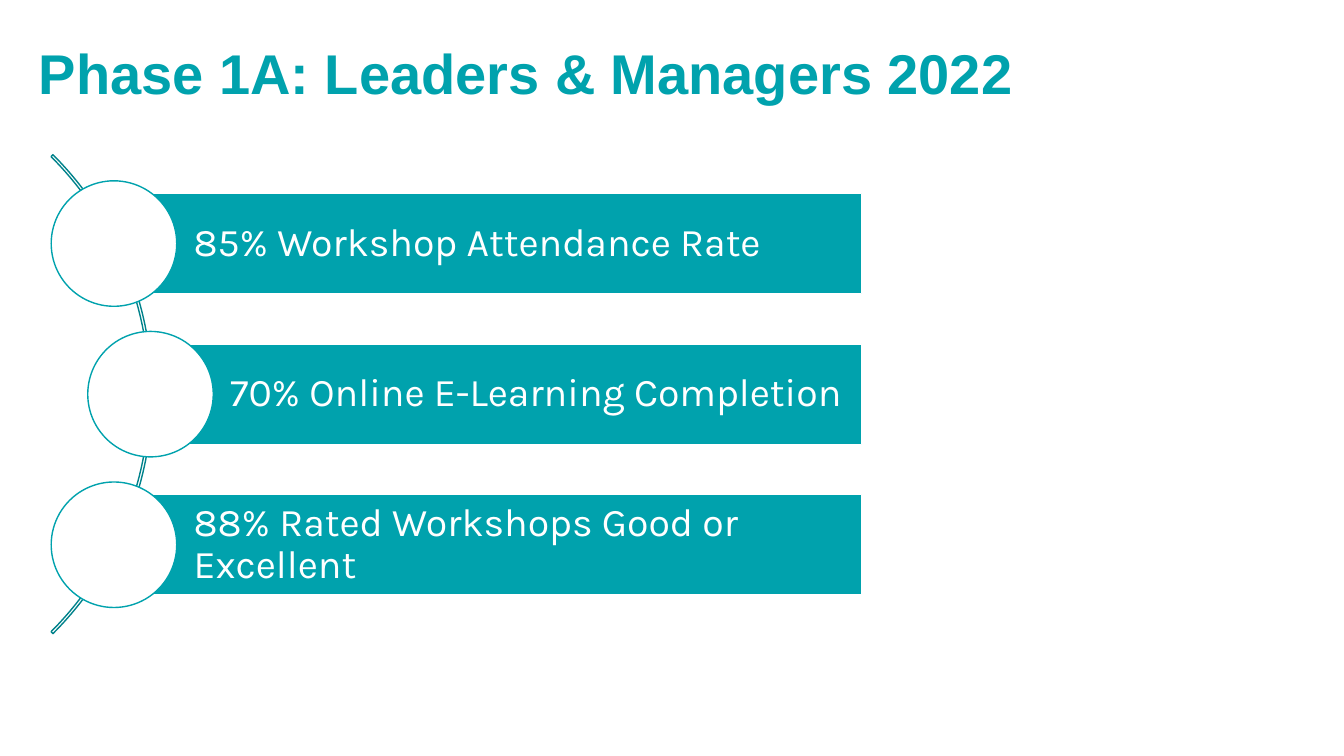
from pptx import Presentation
from pptx.dml.color import RGBColor
from pptx.enum.shapes import MSO_SHAPE
from pptx.enum.text import MSO_ANCHOR, PP_ALIGN
from pptx.util import Pt

ARC, BAR, DOT = MSO_SHAPE.BLOCK_ARC, MSO_SHAPE.RECTANGLE, MSO_SHAPE.OVAL
MIDDLE, LEFT = MSO_ANCHOR.MIDDLE, PP_ALIGN.LEFT
TEAL, DARK, WHITE = "00A2AD", "00828B", "FFFFFF"
RATES = [
    "85% Workshop Attendance Rate",
    "70% Online E-Learning Completion",
    "88% Rated Workshops Good or Excellent",
]


def color(code):
    return RGBColor.from_string(code)


def add_shape(slide, kind, box, fill, line):
    shape = slide.shapes.add_shape(kind, *map(Pt, box))
    shape.shadow.inherit = False
    if fill:
        shape.fill.solid()
        shape.fill.fore_color.rgb = color(fill)
    else:
        shape.fill.background()
    shape.line.color.rgb = color(line)
    shape.line.width = Pt(1)
    return shape


def set_text(shape, text, font, size, tint, bold=False):
    frame = shape.text_frame
    frame.word_wrap = True
    frame.vertical_anchor = MIDDLE
    frame.text = text
    para = frame.paragraphs[0]
    para.alignment = LEFT
    para.line_spacing = 0.9
    para.font.name = font
    para.font.size = Pt(size)
    para.font.bold = bold
    para.font.color.rgb = color(tint)


def add_title(slide, text, box):
    title = slide.shapes.title
    title.left, title.top, title.width, title.height = map(Pt, box)
    set_text(title, text, "Arial", 40, TEAL, True)


def add_rate(slide, text, box):
    """Draw a bar with a circle centred on its left edge."""
    left, top, width, height = box
    bar = add_shape(slide, BAR, box, TEAL, WHITE)
    set_text(bar, text, "Karla", 28, WHITE)
    frame = bar.text_frame
    frame.margin_left = Pt(56.9)
    frame.margin_right = frame.margin_top = frame.margin_bottom = Pt(5.6)
    size = 1.25 * height
    dot = (left - size / 2, top + (height - size) / 2, size, size)
    add_shape(slide, DOT, dot, WHITE, TEAL)


def add_list(slide, rates, box):
    """Draw bars along an arc that bulges right at mid-height."""
    left, top, width, height = box
    size = 483.8
    arc_box = (left - 456.5, top + (height - size) / 2, size, size)
    arc = add_shape(slide, ARC, arc_box, None, DARK)
    for i, value in enumerate((189, 27, 0.004)):
        arc.adjustments[i] = value
    tall = height / 4
    step = (height - tall) / (len(rates) - 1)
    for i, text in enumerate(rates):
        shift = 26.1 if i == len(rates) // 2 else 0
        add_rate(slide, text, (left + shift, top + i * step, width - shift, tall))


def main():
    deck = Presentation()
    deck.slide_width, deck.slide_height = Pt(960), Pt(540)
    slide = deck.slides.add_slide(deck.slide_layouts[5])
    add_list(slide, RATES, (81.4, 138.1, 534.2, 286.9))
    add_title(slide, "Phase 1A: Leaders & Managers 2022", (20.6, 13.5, 779, 81.4))
    deck.save("out.pptx")


if __name__ == "__main__":
    main()
